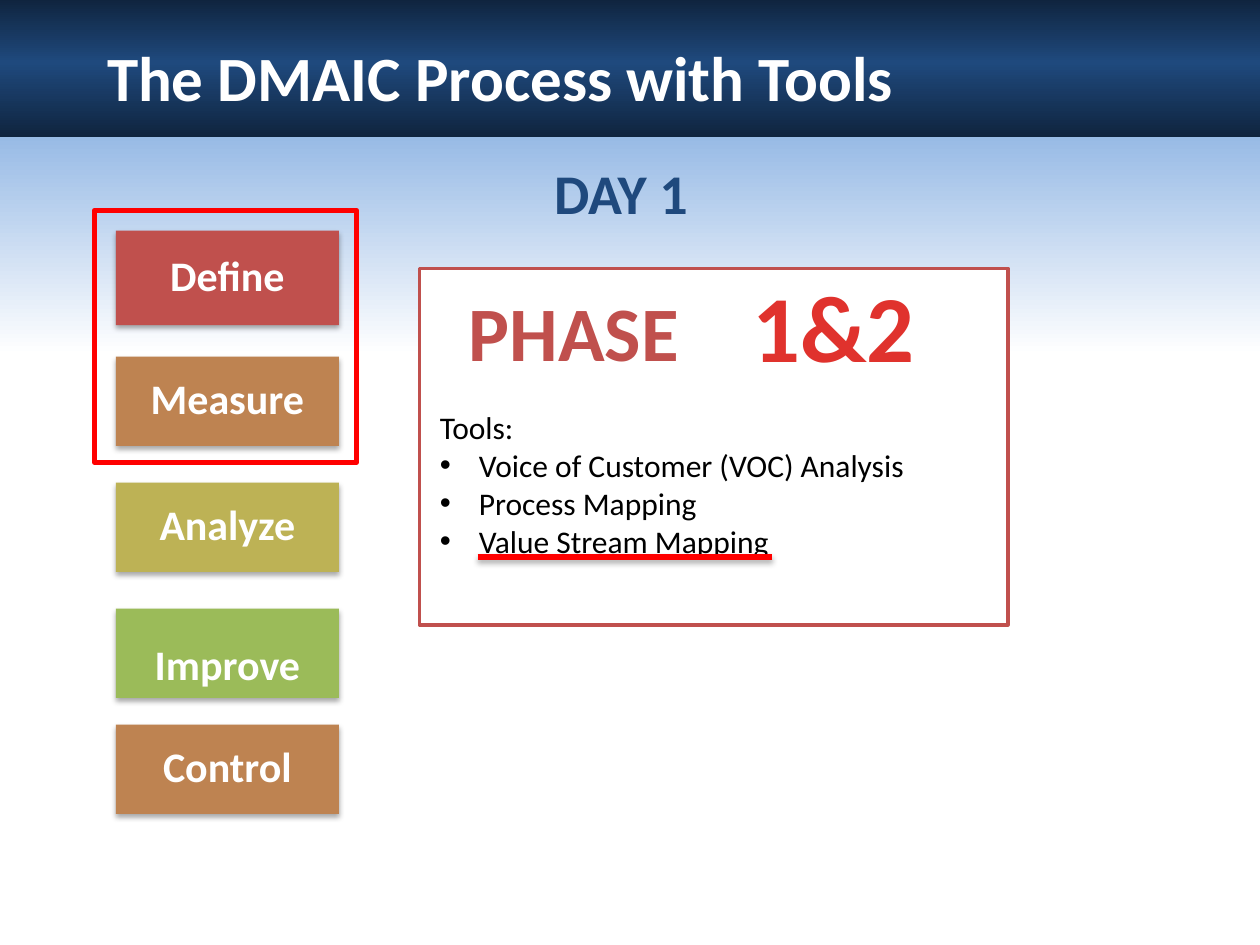
from copy import deepcopy
from lxml.etree import SubElement
from pptx import Presentation
from pptx.dml.color import RGBColor
from pptx.enum.shapes import MSO_CONNECTOR, MSO_SHAPE
from pptx.enum.text import MSO_ANCHOR, MSO_AUTO_SIZE, PP_ALIGN
from pptx.oxml.ns import qn
from pptx.util import Inches, Pt

RED = "FF0000"
BRICK = "C0504D"
STEPS = [
    ("Define", 1.83, 0.75, BRICK),
    ("Measure", 2.83, 0.71, "BE8351"),
    ("Analyze", 3.83, 0.71, "BDB255"),
    ("Improve", 4.83, 0.71, "9BBB59"),
    ("Control", 5.75, 0.71, "BE8351"),
]
TOOLS = ["Voice of Customer (VOC) Analysis", "Process Mapping", "Value Stream Mapping"]


def rgb(color):
    return RGBColor.from_string(color)


def place(sp, x, y, w, h):
    sp.left, sp.top, sp.width, sp.height = (Inches(v) for v in (x, y, w, h))


def write(p, text, size=18, color="000000", bold=False, align=PP_ALIGN.LEFT, spacing=1.0):
    p.alignment = align
    p.line_spacing = spacing
    p.space_before = Pt(0)
    r = p.add_run()
    r.text = text
    r.font.name = "Calibri"
    r.font.size = Pt(size)
    r.font.bold = bold
    r.font.color.rgb = rgb(color)


def add_rect(s, x, y, w, h, fill=None, line=None, weight=1):
    sp = s.shapes.add_shape(MSO_SHAPE.RECTANGLE, Inches(x), Inches(y), Inches(w), Inches(h))
    sp.shadow.inherit = False
    if fill:
        sp.fill.solid()
        sp.fill.fore_color.rgb = rgb(fill)
    else:
        sp.fill.background()
    if line:
        sp.line.color.rgb = rgb(line)
        sp.line.width = Pt(weight)
    else:
        sp.line.fill.background()
    return sp


def add_gradient_band(s, x, y, w, h, stops):
    sp = add_rect(s, x, y, w, h)
    sp.fill.gradient()
    sp.fill.gradient_angle = 270
    gs_list = sp._element.spPr.find(qn("a:gradFill")).find(qn("a:gsLst"))
    for _ in stops[2:]:
        gs_list.append(deepcopy(gs_list[-1]))
    for stop, (position, color) in zip(sp.fill.gradient_stops, stops):
        stop.position = position
        stop.color.rgb = rgb(color)


def add_shadow(sp):
    spPr = sp._element.spPr
    effects = spPr.find(qn("a:effectLst"))
    if effects is None:
        effects = SubElement(spPr, qn("a:effectLst"))
    outer = SubElement(effects, qn("a:outerShdw"), blurRad="40000", dist="23000",
                       dir="5400000", rotWithShape="0")
    color = SubElement(outer, qn("a:srgbClr"), val="000000")
    SubElement(color, qn("a:alpha"), val="35000")


def add_step(s, text, y, h, fill):
    sp = add_rect(s, 0.92, y, 1.77, h, fill)
    add_shadow(sp)
    tf = sp.text_frame
    tf.word_wrap = True
    tf.vertical_anchor = MSO_ANCHOR.MIDDLE
    tf.margin_left = tf.margin_right = Inches(0.1)
    low = text == "Improve"
    tf.margin_top = Inches(0.25 if low else 0.13)
    tf.margin_bottom = Inches(0.03 if low else 0.13)
    write(tf.paragraphs[0], text, size=24, color="FFFFFF", bold=True,
          align=PP_ALIGN.CENTER, spacing=0.9)


def add_label(s, text, x, y, w, h, **fmt):
    sp = s.shapes.add_textbox(Inches(x), Inches(y), Inches(w), Inches(h))
    sp.text_frame.word_wrap = False
    write(sp.text_frame.paragraphs[0], text, bold=True, **fmt)


def set_bullet(p, char=None):
    pPr = p._p.get_or_add_pPr()
    indent = Inches(0.31) if char else 0
    pPr.set("marL", str(indent))
    pPr.set("indent", str(-indent))
    if char:
        SubElement(pPr, qn("a:buFont"), typeface="Arial")
        SubElement(pPr, qn("a:buChar"), char=char)
    else:
        SubElement(pPr, qn("a:buNone"))


def fill_title(s):
    title = s.shapes.title
    s.shapes._spTree.append(title._element)
    place(title, 0.75, 0.25, 9.17, 0.71)
    title.text_frame.auto_size = MSO_AUTO_SIZE.NONE
    write(title.text_frame.paragraphs[0], "The DMAIC Process with Tools",
          size=36, color="FFFFFF", bold=True)


def fill_tools(s):
    body = s.placeholders[1]
    s.shapes._spTree.append(body._element)
    place(body, 3.39, 3.19, 4.52, 2.22)
    tf = body.text_frame
    tf.auto_size = MSO_AUTO_SIZE.NONE
    set_bullet(tf.paragraphs[0])
    write(tf.paragraphs[0], "Tools:")
    for tool in TOOLS:
        p = tf.add_paragraph()
        set_bullet(p, "•")
        write(p, tool)


def add_underline(s, x1, x2, y):
    line = s.shapes.add_connector(MSO_CONNECTOR.STRAIGHT, Inches(x1), Inches(y), Inches(x2), Inches(y))
    line.line.color.rgb = rgb(RED)
    line.line.width = Pt(3)
    add_shadow(line)


def main():
    prs = Presentation()
    prs.slide_width, prs.slide_height = Inches(10), Inches(7.5)
    s = prs.slides.add_slide(prs.slide_layouts[1])
    add_gradient_band(s, -0.01, 0.92, 10.03, 6.54, [(0, "8EB4E3"), (0.29, "FFFFFF")])
    add_gradient_band(s, -0.03, -0.01, 10.04, 1.1,
                      [(0, "0F243E"), (0.46, "1F497D"), (1, "0F243E")])
    for step in STEPS:
        add_step(s, *step)
    add_rect(s, 3.33, 2.13, 4.67, 2.83, "FFFFFF", BRICK, 2)
    add_label(s, "1&2", 5.81, 2.08, 1.61, 1.01, size=54, color="E0322D", align=PP_ALIGN.CENTER)
    add_label(s, "PHASE", 3.39, 2.21, 2.33, 0.84, size=44, color=BRICK, align=PP_ALIGN.CENTER)
    fill_tools(s)
    fill_title(s)
    add_label(s, "DAY 1", 4.3, 1.21, 1.47, 0.64, size=32, color="1F497D")
    add_rect(s, 0.75, 1.67, 2.08, 2, line=RED, weight=3)
    add_underline(s, 3.79, 6.13, 4.42)
    prs.save("out.pptx")


if __name__ == "__main__":
    main()
